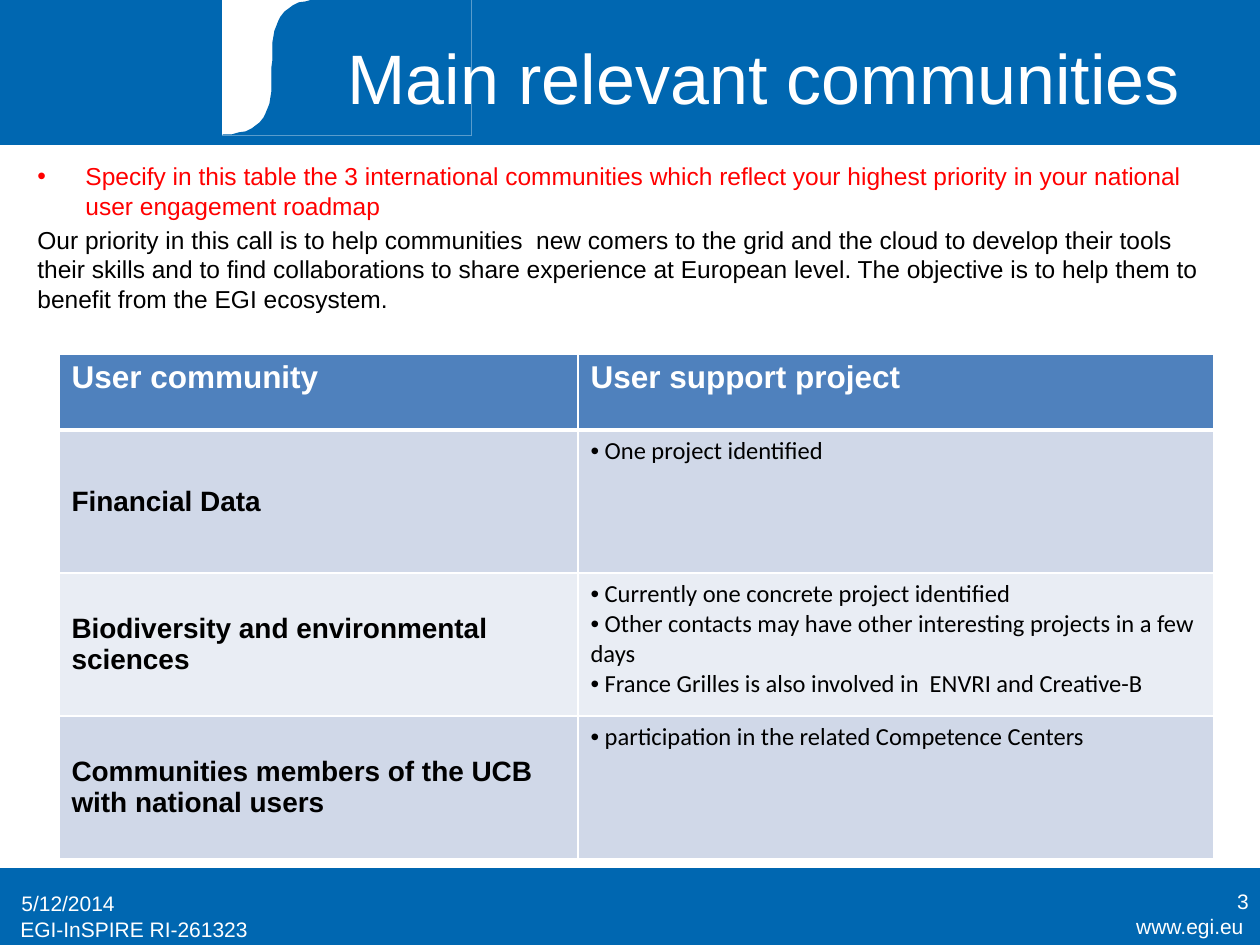
from lxml import etree
from pptx import Presentation
from pptx import util as u
from pptx.dml.color import RGBColor
from pptx.enum import shapes, text
from pptx.oxml.ns import qn

WHITE = RGBColor(0xFF, 0xFF, 0xFF)
BLACK = RGBColor(0, 0, 0)
RED = RGBColor(0xFF, 0, 0)
BRAND_BLUE = RGBColor(0x00, 0x67, 0xB1)
HEADER_BLUE = RGBColor(0x4F, 0x81, 0xBD)
BAND_DARK = RGBColor(0xD0, 0xD8, 0xE8)
BAND_LIGHT = RGBColor(0xE9, 0xED, 0xF4)

LEFT, CENTER, RIGHT = text.PP_ALIGN.LEFT, text.PP_ALIGN.CENTER, text.PP_ALIGN.RIGHT
TOP, MIDDLE = text.MSO_ANCHOR.TOP, text.MSO_ANCHOR.MIDDLE

WIDTH, HEIGHT = 1260, 945
SCALE = u.Inches(10) / WIDTH

BANDS = [
    ((0, 869, WIDTH, 76), BRAND_BLUE),
    ((0, 0, WIDTH, 144), BRAND_BLUE),
    ((223, 0, 248, 135), WHITE),
]
CURVE = [(223, 135), (322, 135), (223, 0), (322, 0)]
CURVE_CORNERS = [(471, 0), (471, 135)]
CURVE_STEPS = 32

LABELS = [
    ("www.egi.eu", (1057, 907, 199, 39), 12, RIGHT, TOP),
    ("EGI-InSPIRE RI-261323", (8, 910, 315, 39), 12, LEFT, TOP),
    ("Main relevant communities", (292, 16, 943, 120), 40, CENTER, MIDDLE),
    ("5/12/2014", (9, 878, 294, 51), 12, LEFT, MIDDLE),
    ("3", (968, 876, 293, 51), 12, RIGHT, MIDDLE),
]

BODY_BOX = (25, 155, 1191, 189)
BODY_INDENT = 48
INSTRUCTION = (
    "Specify in this table the 3 international communities which reflect "
    "your highest priority in your national user engagement roadmap"
)
PRIORITY = (
    "Our priority in this call is to help communities  new comers to the grid "
    "and the cloud to develop their tools their skills and to find collaborations "
    "to share experience at European level. The objective is to help them to "
    "benefit from the EGI ecosystem."
)

TABLE_ORIGIN = (59, 354)
COLUMNS = [519, 636]
HEADER_HEIGHT, ROW_HEIGHT = 76, 143
HEADERS = ["User community", "User support project"]
COMMUNITIES = [
    ("Financial Data", ["One project identified"]),
    ("Biodiversity and environmental sciences", [
        "Currently one concrete project identified",
        "Other contacts may have other interesting projects in a few days",
        "France Grilles is also involved in  ENVRI and Creative-B",
    ]),
    ("Communities members of the UCB with national users",
     ["participation in the related Competence Centers"]),
]


def px(value):
    return u.Emu(round(value * SCALE))


def paint(shape, color):
    shape.shadow.inherit = False
    shape.fill.solid()
    shape.fill.fore_color.rgb = color
    shape.line.color.rgb = color
    shape.line.width = u.Pt(0.75)


def style(paragraph, size, color, font="Arial", bold=False):
    paragraph.font.size = u.Pt(size)
    paragraph.font.name = font
    paragraph.font.bold = bold
    paragraph.font.color.rgb = color


def add_bullet(paragraph, indent=0):
    properties = paragraph._p.get_or_add_pPr()
    properties.set("marL", str(px(indent)))
    properties.set("indent", str(-px(indent)))
    etree.SubElement(properties, qn("a:buFont"), typeface="Arial")
    etree.SubElement(properties, qn("a:buChar"), char="•")


def add_text(slide, box, lines, anchor=TOP):
    frame = slide.shapes.add_textbox(*map(px, box)).text_frame
    frame.word_wrap = True
    frame.vertical_anchor = anchor
    frame.text = "\n".join(lines)
    return frame.paragraphs


def curve_point(t):
    weights = [(1 - t) ** 3, 3 * t * (1 - t) ** 2, 3 * t * t * (1 - t), t ** 3]
    return tuple(sum(w * point[axis] for w, point in zip(weights, CURVE)) for axis in (0, 1))


def add_bands(slide):
    for box, color in BANDS:
        paint(slide.shapes.add_shape(shapes.MSO_SHAPE.RECTANGLE, *map(px, box)), color)
    outline = [curve_point(i / CURVE_STEPS) for i in range(1, CURVE_STEPS + 1)]
    builder = slide.shapes.build_freeform(*CURVE[0], scale=SCALE)
    builder.add_line_segments(outline + CURVE_CORNERS, close=True)
    paint(builder.convert_to_shape(), BRAND_BLUE)


def add_body(slide):
    instruction, priority = add_text(slide, BODY_BOX, [INSTRUCTION, PRIORITY])
    add_bullet(instruction, BODY_INDENT)
    priority.space_before = u.Pt(2.8)
    style(instruction, 14, RED)
    style(priority, 14, BLACK)


def format_cell(cell, fill, bottom=1):
    properties = cell._tc.get_or_add_tcPr()
    for side, width in (("L", 1), ("R", 1), ("T", 1), ("B", bottom)):
        line = etree.SubElement(properties, qn(f"a:ln{side}"), w=str(u.Pt(width)))
        solid = etree.SubElement(line, qn("a:solidFill"))
        etree.SubElement(solid, qn("a:srgbClr"), val=str(WHITE))
    cell.fill.solid()
    cell.fill.fore_color.rgb = fill


def add_table(slide):
    heights = [HEADER_HEIGHT] + [ROW_HEIGHT] * len(COMMUNITIES)
    size = (sum(COLUMNS), sum(heights))
    table = slide.shapes.add_table(
        len(heights), len(COLUMNS), *map(px, TABLE_ORIGIN + size)).table
    for column, width in zip(table.columns, COLUMNS):
        column.width = px(width)
    for row, height in zip(table.rows, heights):
        row.height = px(height)

    for index, header in enumerate(HEADERS):
        cell = table.cell(0, index)
        cell.text = header
        style(cell.text_frame.paragraphs[0], 18, WHITE, bold=True)
        format_cell(cell, HEADER_BLUE, bottom=3)

    for index, (community, projects) in enumerate(COMMUNITIES, 1):
        fill = BAND_DARK if index % 2 else BAND_LIGHT
        name_cell, project_cell = table.cell(index, 0), table.cell(index, 1)
        name_cell.text = community
        name_cell.vertical_anchor = MIDDLE
        style(name_cell.text_frame.paragraphs[0], 16, BLACK, bold=True)
        project_cell.text = "\n".join(f" {project}" for project in projects)
        for paragraph in project_cell.text_frame.paragraphs:
            add_bullet(paragraph)
            style(paragraph, 14, BLACK, font="Calibri")
        format_cell(name_cell, fill)
        format_cell(project_cell, fill)


def main():
    presentation = Presentation()
    presentation.slide_width, presentation.slide_height = px(WIDTH), px(HEIGHT)
    slide = presentation.slides.add_slide(presentation.slide_layouts[6])
    add_bands(slide)
    for label, box, size, alignment, anchor in LABELS:
        paragraph = add_text(slide, box, [label], anchor)[0]
        paragraph.alignment = alignment
        style(paragraph, size, WHITE)
    add_table(slide)
    add_body(slide)
    presentation.save("out.pptx")


if __name__ == "__main__":
    main()
